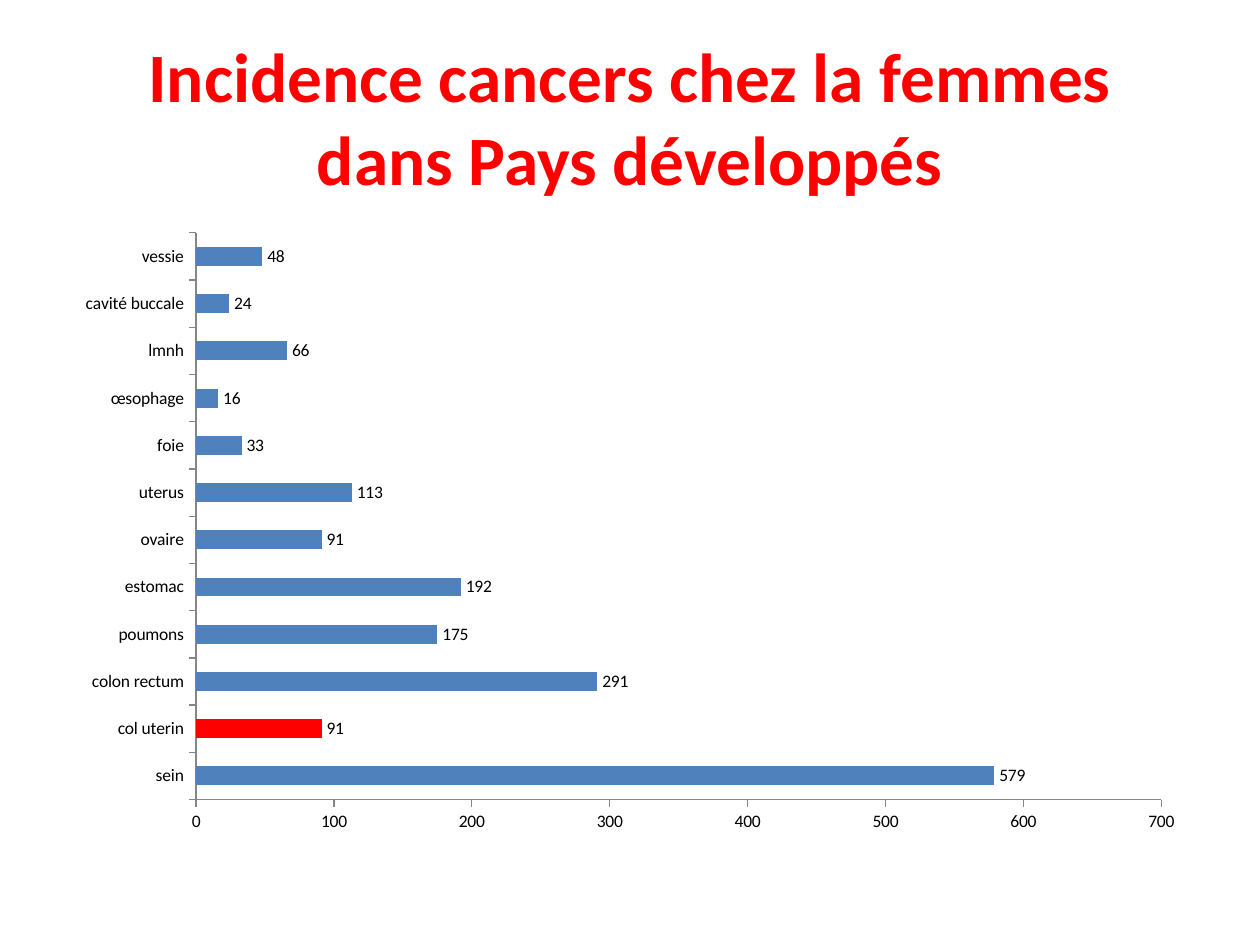
from pptx import Presentation
from pptx.chart.data import CategoryChartData
from pptx.dml.color import RGBColor
from pptx.enum.chart import XL_CHART_TYPE, XL_LABEL_POSITION, XL_TICK_MARK
from pptx.enum.text import MSO_ANCHOR, PP_ALIGN
from pptx.util import Pt

TITLE = "Incidence cancers chez la femmes\vdans Pays développés"
INCIDENCE = {
    "sein": 579,
    "col uterin": 91,
    "colon rectum": 291,
    "poumons": 175,
    "estomac": 192,
    "ovaire": 91,
    "uterus": 113,
    "foie": 33,
    "œsophage": 16,
    "lmnh": 66,
    "cavité buccale": 24,
    "vessie": 48,
}
HIGHLIGHT = "col uterin"
COLORS = {"title": "FF0000", "bar": "4F81BD", "highlight": "FF0000",
          "text": "000000", "axis": "868686"}
FONT = "Calibri"
MARGIN, CONTENT_WIDTH = Pt(36), Pt(648)


def color(name):
    return RGBColor.from_string(COLORS[name])


def style_font(font, size, color_name, bold=False):
    font.name, font.size, font.bold = FONT, Pt(size), bold
    font.color.rgb = color(color_name)


def fill_solid(fill, color_name):
    fill.solid()
    fill.fore_color.rgb = color(color_name)


def add_title(slide):
    title = slide.shapes.add_textbox(MARGIN, Pt(21.6), CONTENT_WIDTH, Pt(90))
    frame = title.text_frame
    frame.word_wrap = True
    frame.vertical_anchor = MSO_ANCHOR.MIDDLE
    paragraph = frame.paragraphs[0]
    paragraph.text = TITLE
    paragraph.alignment = PP_ALIGN.CENTER
    style_font(paragraph.font, 39.6, "title", bold=True)


def add_incidence_chart(slide):
    data = CategoryChartData()
    data.categories = list(INCIDENCE)
    data.add_series("Series 1", list(INCIDENCE.values()))
    chart = slide.shapes.add_chart(XL_CHART_TYPE.BAR_CLUSTERED, MARGIN, Pt(126),
                                   CONTENT_WIDTH, Pt(356.4), data).chart
    chart.has_title = False
    chart.has_legend = False
    style_font(chart.font, 10, "text")

    for axis in (chart.category_axis, chart.value_axis):
        axis.has_major_gridlines = False
        axis.major_tick_mark = XL_TICK_MARK.OUTSIDE
        axis.minor_tick_mark = XL_TICK_MARK.NONE
        axis.format.line.color.rgb = color("axis")
        axis.format.line.width = Pt(0.75)
    chart.value_axis.minimum_scale = 0
    chart.value_axis.maximum_scale = 700
    chart.value_axis.major_unit = 100

    plot = chart.plots[0]
    plot.gap_width = 150
    plot.vary_by_categories = False
    plot.has_data_labels = True
    plot.data_labels.show_value = True
    plot.data_labels.position = XL_LABEL_POSITION.OUTSIDE_END

    series = plot.series[0]
    fill_solid(series.format.fill, "bar")
    highlighted = series.points[list(INCIDENCE).index(HIGHLIGHT)]
    fill_solid(highlighted.format.fill, "highlight")


def main():
    presentation = Presentation()
    presentation.slide_width, presentation.slide_height = Pt(720), Pt(540)
    slide = presentation.slides.add_slide(presentation.slide_layouts[6])
    add_title(slide)
    add_incidence_chart(slide)
    presentation.save("out.pptx")


if __name__ == "__main__":
    main()
